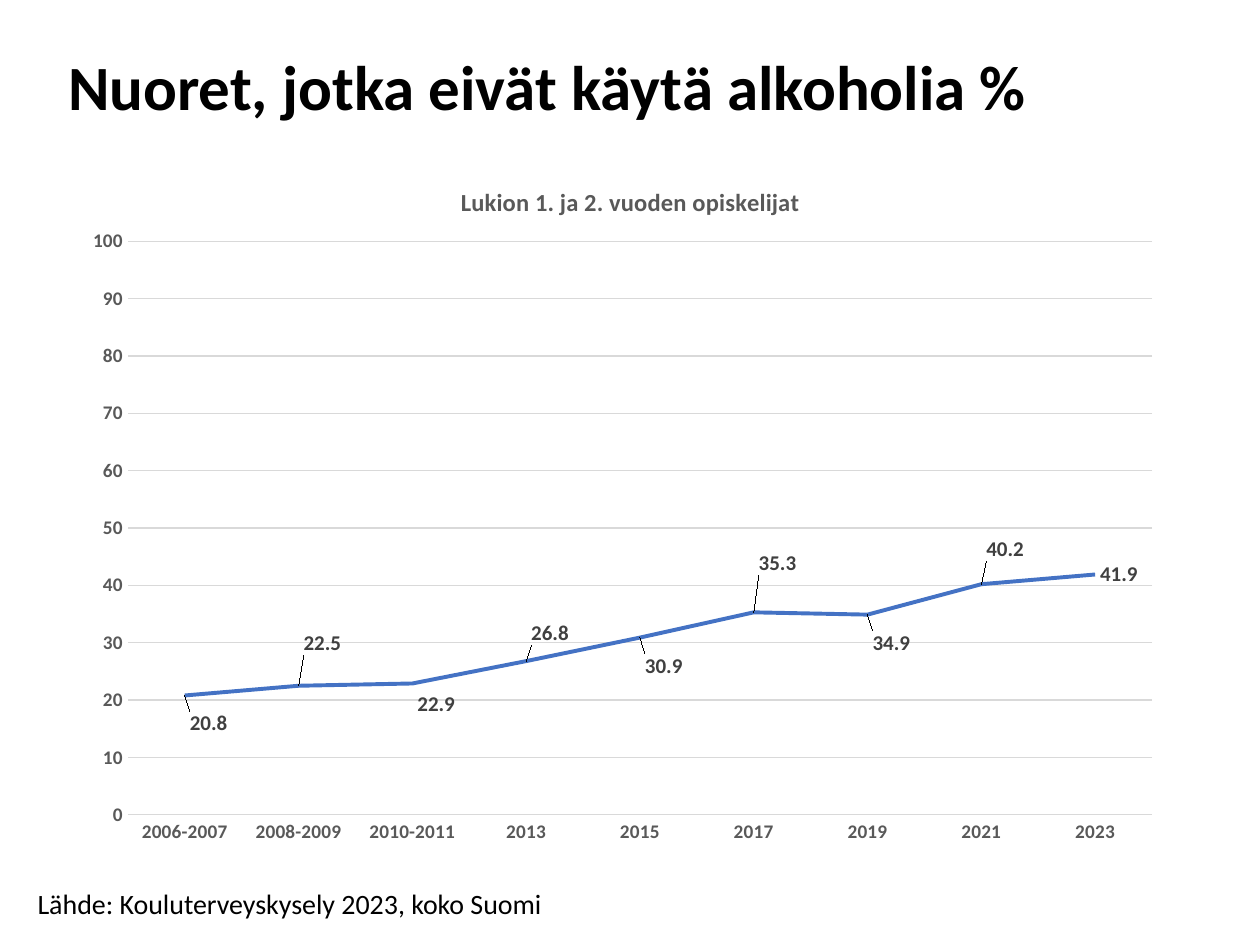
from lxml import etree
from pptx import Presentation
from pptx.chart.data import CategoryChartData
from pptx.dml.color import RGBColor
from pptx.enum.chart import XL_CHART_TYPE, XL_LABEL_POSITION, XL_TICK_MARK
from pptx.enum.text import MSO_ANCHOR, PP_ALIGN
from pptx.oxml.ns import qn
from pptx.util import Inches, Pt

LINE_CHART = XL_CHART_TYPE.LINE
RIGHT = XL_LABEL_POSITION.RIGHT
NO_TICKS = XL_TICK_MARK.NONE
FONT = "Calibri"
BLACK = RGBColor(0x00, 0x00, 0x00)
AXIS_GRAY = RGBColor(0x59, 0x59, 0x59)
LABEL_GRAY = RGBColor(0x40, 0x40, 0x40)
GRID_GRAY = RGBColor(0xD9, 0xD9, 0xD9)
BLUE = RGBColor(0x44, 0x72, 0xC4)

# Content
TITLE = "Nuoret, jotka eivät käytä alkoholia %"
CHART_TITLE = "Lukion 1. ja 2. vuoden opiskelijat"
SOURCE = "Lähde: Kouluterveyskysely 2023, koko Suomi"
# Year, share, vertical label shift as a share of the chart height
POINTS = [
    ("2006-2007", 20.8, 0.04),
    ("2008-2009", 22.5, -0.06),
    ("2010-2011", 22.9, 0.03),
    ("2013", 26.8, -0.04),
    ("2015", 30.9, 0.04),
    ("2017", 35.3, -0.07),
    ("2019", 34.9, 0.04),
    ("2021", 40.2, -0.05),
    ("2023", 41.9, 0),
]


def style_font(font, size, color, bold=False):
    font.name = FONT
    font.size = Pt(size)
    font.bold = bold
    font.color.rgb = color


def add_layout(after, **values):
    """Place a manual chart layout right after the given element."""
    parent = after.getparent()
    for old in parent.findall(qn("c:layout")):
        parent.remove(old)
    layout = etree.Element(qn("c:layout"))
    manual = etree.SubElement(layout, qn("c:manualLayout"))
    for name, value in values.items():
        etree.SubElement(manual, qn(f"c:{name}")).set("val", str(value))
    after.addnext(layout)


presentation = Presentation()
presentation.slide_width = Inches(10)
presentation.slide_height = Inches(7.5)
slide = presentation.slides.add_slide(presentation.slide_layouts[5])

# Title
title = slide.shapes.title
title.left, title.top = Inches(0.44), Inches(0.23)
title.width, title.height = Inches(9.13), Inches(0.97)
title.text_frame.text = TITLE
title.text_frame.vertical_anchor = MSO_ANCHOR.MIDDLE
paragraph = title.text_frame.paragraphs[0]
paragraph.alignment = PP_ALIGN.LEFT
paragraph.line_spacing = 0.9
style_font(paragraph.font, 36, BLACK, True)

# Source line
source = slide.shapes.add_textbox(Inches(0.2), Inches(6.99), Inches(4.37), Inches(0.37))
source.text_frame.word_wrap = True
source.text_frame.text = SOURCE
style_font(source.text_frame.paragraphs[0].font, 16, BLACK)

# Line chart
chart_data = CategoryChartData(number_format="#,##0.0")
chart_data.categories = [year for year, _, _ in POINTS]
chart_data.add_series("Series 1", [share for _, share, _ in POINTS])
chart = slide.shapes.add_chart(
    LINE_CHART, Inches(0.56), Inches(1.21), Inches(8.75), Inches(5.6), chart_data
).chart
style_font(chart.font, 10, BLACK)
chart.has_legend = False
chart.chart_title.text_frame.text = CHART_TITLE
style_font(chart.chart_title.text_frame.paragraphs[0].font, 14, AXIS_GRAY, True)
chart.chart_title.include_in_layout = False
title_text = chart.chart_title._element.find(qn("c:tx"))
add_layout(title_text, xMode="edge", yMode="edge", x=0.35, y=0.04)

# Plot area
plot_area = chart._chartSpace.chart.plotArea
for old_layout in plot_area.findall(qn("c:layout")):
    plot_area.remove(old_layout)
anchor = etree.Element(qn("c:layout"))
plot_area.insert(0, anchor)
manual = etree.SubElement(anchor, qn("c:manualLayout"))
for name, value in dict(layoutTarget="inner", xMode="edge", yMode="edge",
                        x=0.052, y=0.126, w=0.929, h=0.813).items():
    etree.SubElement(manual, qn(f"c:{name}")).set("val", str(value))

# Axes
category_axis, value_axis = chart.category_axis, chart.value_axis
for axis in (category_axis, value_axis):
    axis.major_tick_mark = axis.minor_tick_mark = NO_TICKS
    style_font(axis.tick_labels.font, 11, AXIS_GRAY, True)
value_axis.minimum_scale, value_axis.maximum_scale = 0, 100
value_axis.major_unit = 10
value_axis.tick_labels.number_format = "0"
value_axis.tick_labels.number_format_is_linked = False
value_axis.format.line.fill.background()
value_axis.has_major_gridlines = True
for line in (category_axis.format.line, value_axis.major_gridlines.format.line):
    line.color.rgb = GRID_GRAY
    line.width = Pt(0.75)

# Series and its labels
series = chart.plots[0].series[0]
series.smooth = False
series.format.line.color.rgb = BLUE
series.format.line.width = Pt(2.25)
labels = series.data_labels
labels.show_value = True
labels.number_format = "#,##0.0"
labels.number_format_is_linked = False
labels.position = RIGHT
style_font(labels.font, 12, LABEL_GRAY, True)
for index, (_, _, shift) in enumerate(POINTS):
    if shift:
        label = series.points[index].data_label
        style_font(label.font, 12, LABEL_GRAY, True)
        label.position = RIGHT
        label_index = labels._element.findall(qn("c:dLbl"))[index].find(qn("c:idx"))
        add_layout(label_index, x=0, y=shift)

presentation.save("out.pptx")
